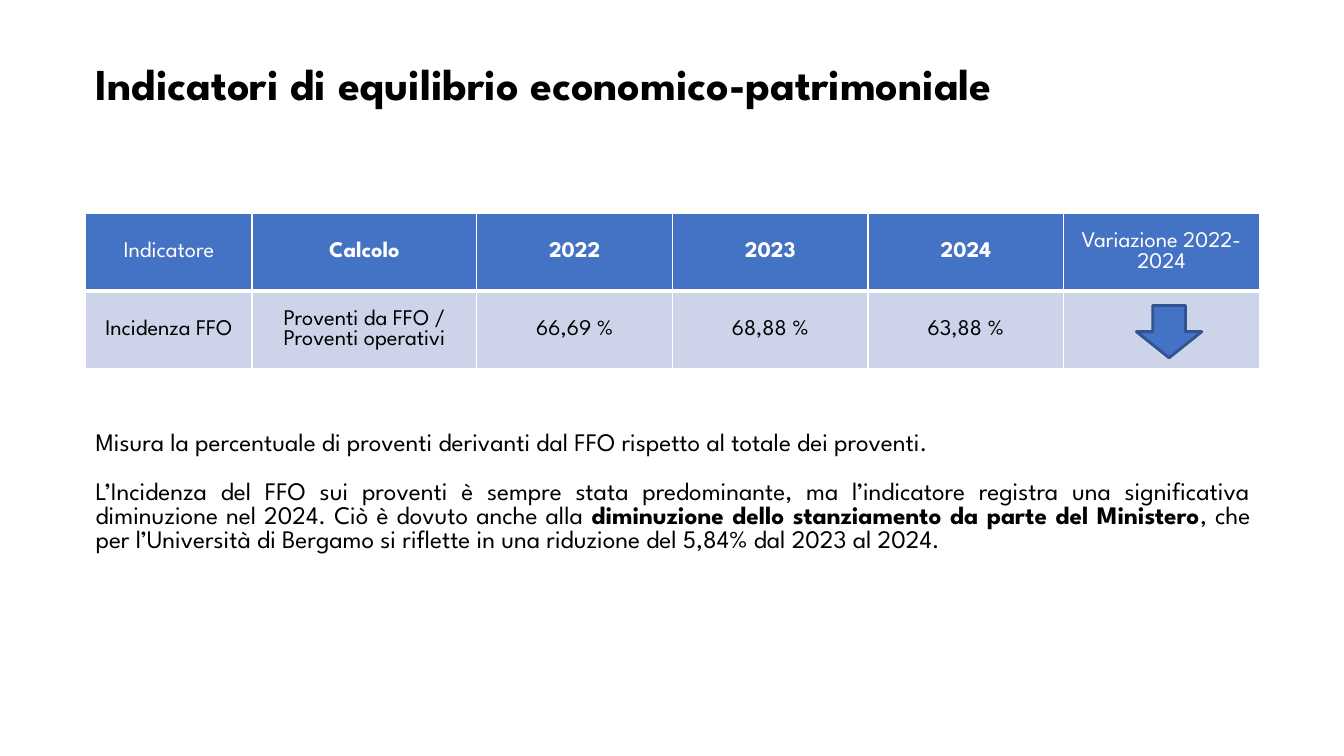
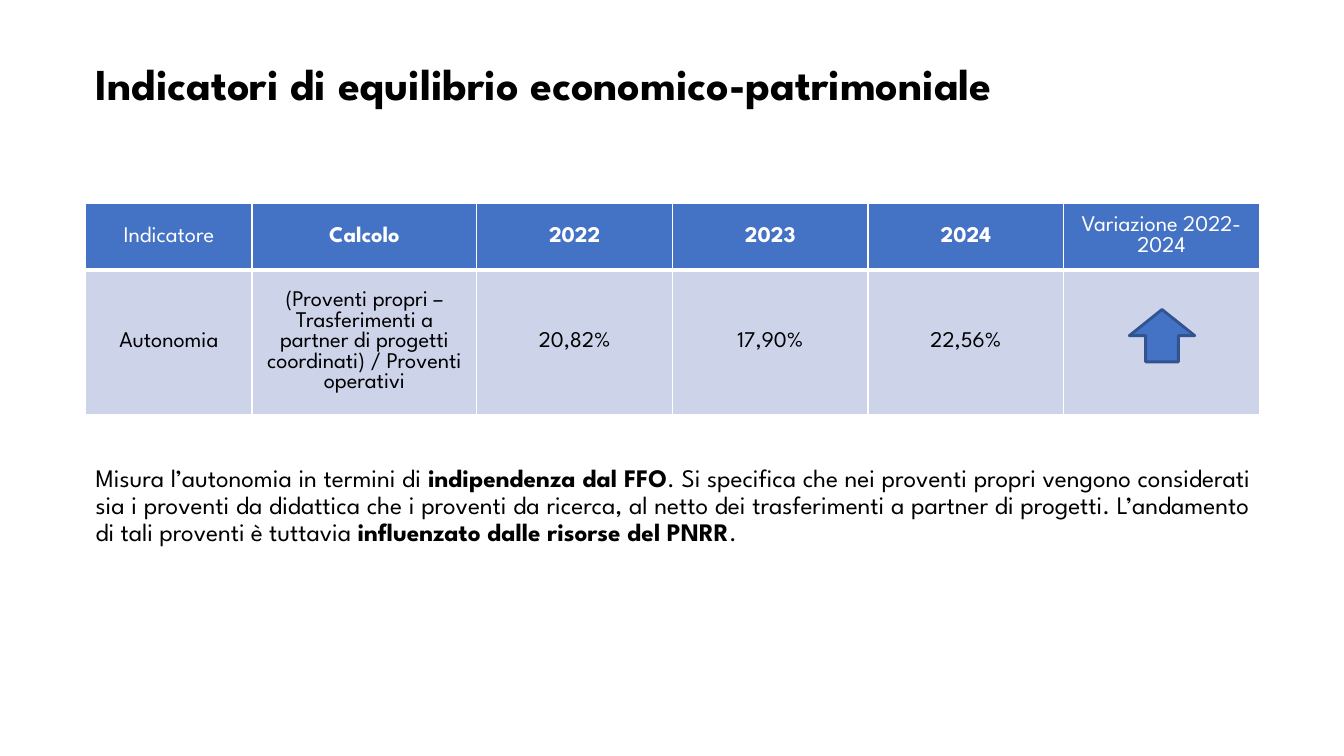
from dataclasses import dataclass

from lxml.etree import SubElement
from pptx import Presentation
from pptx.dml.color import RGBColor
from pptx.enum.shapes import MSO_SHAPE
from pptx.enum.text import MSO_ANCHOR, MSO_AUTO_SIZE, PP_ALIGN
from pptx.oxml.ns import qn
from pptx.slide import Slide
from pptx.table import _Cell
from pptx.text.text import _Paragraph
from pptx.util import Inches, Pt

BLACK = RGBColor(0x00, 0x00, 0x00)
WHITE = RGBColor(0xFF, 0xFF, 0xFF)
BLUE = RGBColor(0x44, 0x72, 0xC4)
DARK_BLUE = RGBColor(0x31, 0x53, 0x8F)
PALE_BLUE = RGBColor(0xCD, 0xD4, 0xEA)

FONT = "League Spartan"
TITLE = "Indicatori di equilibrio economico-patrimoniale"
LEFT = Inches(0.85)
TEXT_WIDTH = Inches(11.65)
COLUMN_WIDTHS = (1.65, 2.23, 1.94, 1.94, 1.94, 1.94)


@dataclass(frozen=True)
class Span:
    text: str
    bold: bool = False


@dataclass(frozen=True)
class Arrow:
    left: float
    top: float
    rotation: float


@dataclass(frozen=True)
class Indicator:
    values: tuple[str, ...]
    table_top: float
    row_heights: tuple[float, float]
    arrow: Arrow
    body_top: float
    body_height: float
    line_spacing: float
    paragraphs: tuple[tuple[Span, ...], ...]


HEADER = (
    Span("Indicatore"),
    Span("Calcolo", True),
    Span("2022", True),
    Span("2023", True),
    Span("2024", True),
    Span("Variazione 2022-2024"),
)

INDICATORS = (
    Indicator(
        values=("Incidenza FFO", "Proventi da FFO / Proventi operativi",
                "66,69 %", "68,88 %", "63,88 %", ""),
        table_top=2.12,
        row_heights=(0.77, 0.77),
        arrow=Arrow(11.27, 3.03, 180),
        body_top=4.24,
        body_height=1.55,
        line_spacing=0.8,
        paragraphs=(
            (Span("Misura la percentuale di proventi derivanti dal FFO "
                  "rispetto al totale dei proventi."),),
            (
                Span("L’Incidenza del FFO sui proventi è sempre stata predominante, "
                     "ma l’indicatore registra una significativa diminuzione nel 2024. "
                     "Ciò è dovuto anche alla "),
                Span("diminuzione dello stanziamento da parte del Ministero", True),
                Span(", che per l’Università di Bergamo si riflette in una riduzione "
                     "del 5,84% dal 2023 al 2024."),
            ),
        ),
    ),
    Indicator(
        values=("Autonomia",
                "(Proventi propri – Trasferimenti a partner di progetti coordinati) "
                "/ Proventi operativi",
                "20,82%", "17,90%", "22,56%", ""),
        table_top=2.02,
        row_heights=(0.66, 1.11),
        arrow=Arrow(11.2, 3.07, 0),
        body_top=4.57,
        body_height=1,
        line_spacing=0.9,
        paragraphs=(
            (
                Span("Misura l’autonomia in termini di "),
                Span("indipendenza dal FFO", True),
                Span(". Si specifica che nei proventi propri vengono considerati sia i "
                     "proventi da didattica che i proventi da ricerca, al netto dei "
                     "trasferimenti a partner di progetti. L’andamento di tali proventi "
                     "è tuttavia "),
                Span("influenzato dalle risorse del PNRR", True),
                Span("."),
            ),
        ),
    ),
)


def add_span(para: _Paragraph, span: Span, size: float, color: RGBColor) -> None:
    run = para.add_run()
    run.text = span.text
    run.font.name = FONT
    run.font.size = Pt(size)
    run.font.bold = span.bold
    run.font.color.rgb = color


def add_title(page: Slide) -> None:
    title = page.shapes.title
    title.left, title.top = LEFT, Inches(0.57)
    title.width, title.height = TEXT_WIDTH, Inches(1.09)
    frame = title.text_frame
    frame.auto_size = MSO_AUTO_SIZE.NONE
    frame.vertical_anchor = MSO_ANCHOR.TOP
    para = frame.paragraphs[0]
    para.alignment = PP_ALIGN.LEFT
    para.line_spacing = 0.9
    add_span(para, Span(TITLE, True), 31.5, BLACK)


def add_body(page: Slide, indicator: Indicator) -> None:
    box = page.shapes.add_textbox(LEFT, Inches(indicator.body_top),
                                  TEXT_WIDTH, Inches(indicator.body_height))
    frame = box.text_frame
    frame.word_wrap = True
    for index, spans in enumerate(indicator.paragraphs):
        para = frame.add_paragraph() if index else frame.paragraphs[0]
        para.alignment = PP_ALIGN.JUSTIFY
        para.line_spacing = indicator.line_spacing
        if index:
            para.space_before = Pt(17.5)
        for span in spans:
            add_span(para, span, 18, BLACK)


def set_borders(cell: _Cell, top: float, bottom: float) -> None:
    properties = cell._tc.get_or_add_tcPr()
    widths = {"a:lnL": 1, "a:lnR": 1, "a:lnT": top, "a:lnB": bottom}
    for position, (tag, width) in enumerate(widths.items()):
        line = SubElement(properties, qn(tag), w=str(Pt(width)))
        properties.insert(position, line)
        fill = SubElement(line, qn("a:solidFill"))
        SubElement(fill, qn("a:srgbClr"), val=str(WHITE))


def fill_cell(cell: _Cell, span: Span, is_header: bool) -> None:
    cell.vertical_anchor = MSO_ANCHOR.MIDDLE
    cell.fill.solid()
    cell.fill.fore_color.rgb = BLUE if is_header else PALE_BLUE
    set_borders(cell, 1 if is_header else 3, 3 if is_header else 1)
    para = cell.text_frame.paragraphs[0]
    para.alignment = PP_ALIGN.CENTER
    if span.text:
        add_span(para, span, 16, WHITE if is_header else BLACK)


def add_indicator_table(page: Slide, indicator: Indicator) -> None:
    rows = (HEADER, tuple(Span(value) for value in indicator.values))
    table = page.shapes.add_table(
        len(rows), len(HEADER), LEFT, Inches(indicator.table_top),
        Inches(sum(COLUMN_WIDTHS)), Inches(sum(indicator.row_heights))).table
    for column, width in zip(table.columns, COLUMN_WIDTHS):
        column.width = Inches(width)
    for row_index, spans in enumerate(rows):
        table.rows[row_index].height = Inches(indicator.row_heights[row_index])
        for column_index, span in enumerate(spans):
            fill_cell(table.cell(row_index, column_index), span, row_index == 0)


def add_arrow(page: Slide, arrow: Arrow) -> None:
    shape = page.shapes.add_shape(MSO_SHAPE.UP_ARROW, Inches(arrow.left),
                                  Inches(arrow.top), Inches(0.65), Inches(0.52))
    shape.rotation = arrow.rotation
    shape.shadow.inherit = False
    shape.fill.solid()
    shape.fill.fore_color.rgb = BLUE
    shape.line.color.rgb = DARK_BLUE
    shape.line.width = Pt(2)


def main() -> None:
    deck = Presentation()
    deck.slide_width, deck.slide_height = Inches(13.33), Inches(7.5)
    title_only = deck.slide_layouts[5]
    for indicator in INDICATORS:
        page = deck.slides.add_slide(title_only)
        add_title(page)
        add_body(page, indicator)
        add_indicator_table(page, indicator)
        add_arrow(page, indicator.arrow)
    deck.save("out.pptx")


if __name__ == "__main__":
    main()
